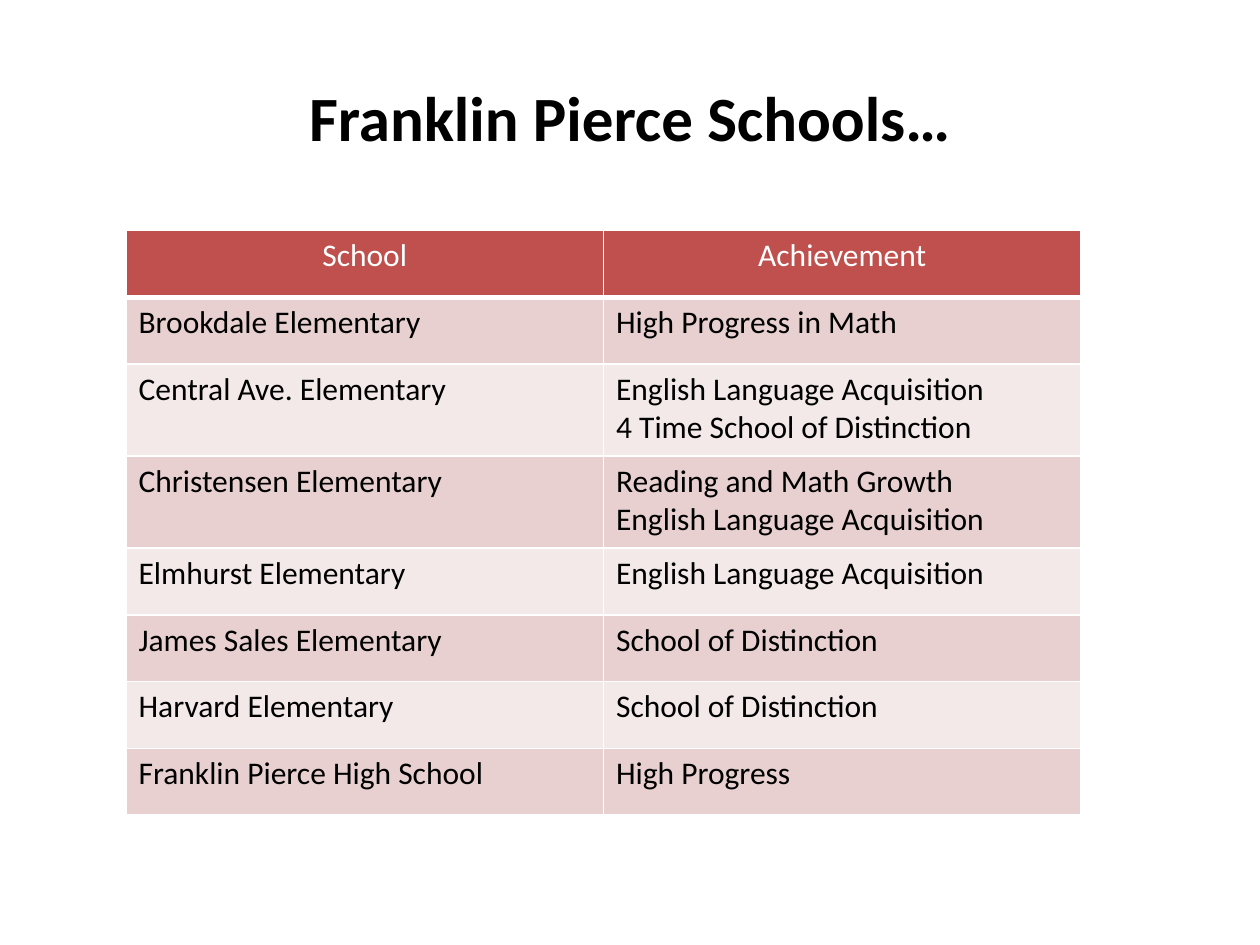
from dataclasses import dataclass
from lxml.etree import SubElement
from pptx import Presentation
from pptx.dml.color import RGBColor
from pptx.enum.text import MSO_ANCHOR, PP_ALIGN
from pptx.oxml.ns import qn
from pptx.util import Inches, Pt


@dataclass(frozen=True)
class Theme:
    font: str = "Calibri"
    ink: str = "000000"
    white: str = "FFFFFF"
    head: str = "C0504D"
    bands: tuple = ("E8D0D0", "F4E9E9")
    title: int = 36
    body: int = 18
    thin: int = 1
    thick: int = 3


@dataclass(frozen=True)
class School:
    name: str
    awards: tuple


THEME = Theme()
WIDE, HIGH = Inches(10), Inches(7.5)
COL = Inches(3.79)
ROW, TALL = Inches(0.53), Inches(0.73)
HEADS = School("School", ("Achievement",))
SCHOOLS = (
    School("Brookdale Elementary", ("High Progress in Math",)),
    School("Central Ave. Elementary",
           ("English Language Acquisition", "4 Time School of Distinction")),
    School("Christensen Elementary",
           ("Reading and Math Growth", "English Language Acquisition")),
    School("Elmhurst Elementary", ("English Language Acquisition",)),
    School("James Sales Elementary", ("School of Distinction",)),
    School("Harvard Elementary", ("School of Distinction",)),
    School("Franklin Pierce High School", ("High Progress",)),
)


def write(frame, lines: tuple, size: int, color: str, align, bold: bool = False) -> None:
    for n, line in enumerate(lines):
        para = frame.add_paragraph() if n else frame.paragraphs[0]
        para.alignment = align
        run = para.add_run()
        run.text = line
        font = run.font
        font.name, font.size, font.bold = THEME.font, Pt(size), bold
        font.color.rgb = RGBColor.from_string(color)


def edge(cell, side: str, width: int) -> None:
    props = cell._tc.get_or_add_tcPr()
    line = SubElement(props, qn(f"a:ln{side}"), w=str(Pt(width)))
    fill = SubElement(line, qn("a:solidFill"))
    SubElement(fill, qn("a:srgbClr"), val=THEME.white)


def draw_cell(cell, lines: tuple, row: int) -> None:
    top = THEME.thick if row == 1 else THEME.thin
    base = THEME.thin if row else THEME.thick
    for side, width in zip("LRTB", (THEME.thin, THEME.thin, top, base)):
        edge(cell, side, width)
    cell.fill.solid()
    shade = THEME.bands[(row - 1) % 2] if row else THEME.head
    cell.fill.fore_color.rgb = RGBColor.from_string(shade)
    color = THEME.ink if row else THEME.white
    align = PP_ALIGN.LEFT if row else PP_ALIGN.CENTER
    write(cell.text_frame, lines, THEME.body, color, align)


def draw_title(slide, text: str) -> None:
    box = slide.shapes.add_textbox(
        int(WIDE * 0.05), int(HIGH * 0.04), int(WIDE * 0.9), Inches(1.25))
    frame = box.text_frame
    frame.word_wrap = True
    frame.vertical_anchor = MSO_ANCHOR.MIDDLE
    write(frame, (text,), THEME.title, THEME.ink, PP_ALIGN.CENTER, True)


def draw_table(slide, rows: tuple) -> None:
    sizes = [TALL if len(item.awards) > 1 else ROW for item in rows]
    table = slide.shapes.add_table(
        len(rows), 2, int(WIDE * 0.1), Inches(1.83), COL * 2, sum(sizes)).table
    for col in table.columns:
        col.width = COL
    for n, item in enumerate(rows):
        table.rows[n].height = sizes[n]
        draw_cell(table.cell(n, 0), (item.name,), n)
        draw_cell(table.cell(n, 1), item.awards, n)


def main() -> None:
    deck = Presentation()
    deck.slide_width, deck.slide_height = WIDE, HIGH
    slide = deck.slides.add_slide(deck.slide_layouts[6])
    draw_title(slide, "Franklin Pierce Schools…")
    draw_table(slide, (HEADS, *SCHOOLS))
    deck.save("out.pptx")


if __name__ == "__main__":
    main()
